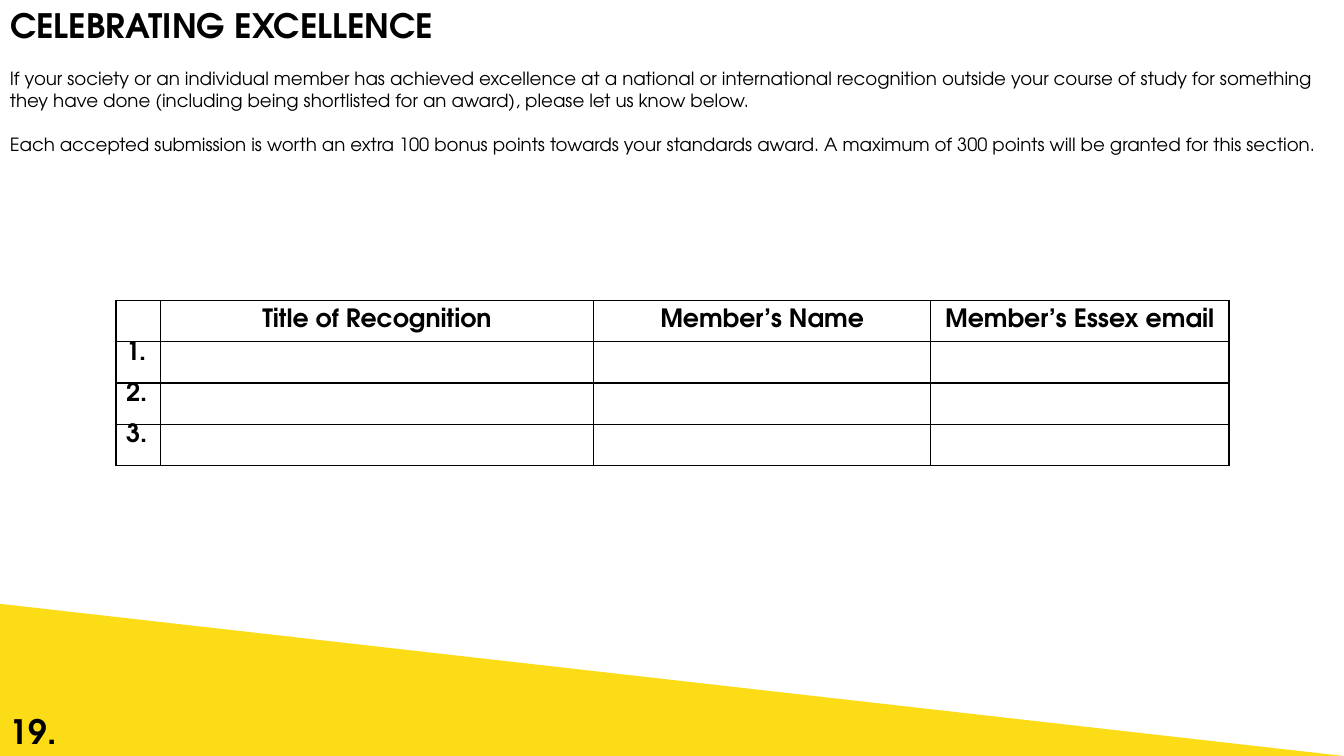
from dataclasses import dataclass

from lxml.etree import SubElement
from pptx import Presentation
from pptx.dml.color import RGBColor
from pptx.enum.shapes import MSO_SHAPE
from pptx.enum.text import MSO_ANCHOR, PP_ALIGN
from pptx.oxml.ns import qn
from pptx.slide import Slide
from pptx.table import _Cell
from pptx.text.text import TextFrame, _Paragraph
from pptx.util import Inches, Pt

FONT = "TeX Gyre Adventor"
BLACK = "000000"
WHITE = "FFFFFF"
YELLOW = "FCDC16"


@dataclass
class Column:
    """A table column with its heading and width in inches."""

    heading: str
    width: float


COLUMNS = [
    Column("", 0.44),
    Column("Title of Recognition", 4.3),
    Column("Member’s Name", 3.34),
    Column("Member’s Essex email", 2.96),
]
ENTRY_COUNT = 3
ROW_HEIGHT = 0.41
GUIDANCE = [
    "If your society or an individual member has achieved excellence at a national or "
    "international recognition outside your course of study for something they have done "
    "(including being shortlisted for an award), please let us know below.",
    "Each accepted submission is worth an extra 100 bonus points towards your standards award. "
    "A maximum of 300 points will be granted for this section.",
]


def color(value: str) -> RGBColor:
    """Turn a hex string into a colour."""
    return RGBColor.from_string(value)


def add_run(paragraph: _Paragraph, text: str, size: float, bold: bool = True) -> None:
    """Add one formatted run to a paragraph."""
    run = paragraph.add_run()
    run.text = text
    run.font.name = FONT
    run.font.size = Pt(size)
    run.font.bold = bold
    run.font.color.rgb = color(BLACK)


def add_text_box(slide: Slide, left: float, top: float, width: float, height: float) -> TextFrame:
    """Add a wrapping text box and return its text frame."""
    box = slide.shapes.add_textbox(Inches(left), Inches(top), Inches(width), Inches(height))
    box.text_frame.word_wrap = True
    return box.text_frame


def add_title(slide: Slide) -> None:
    """Place and format the slide title."""
    title = slide.shapes.title
    title.left, title.top = Inches(0), Inches(0)
    title.width, title.height = Inches(13.33), Inches(0.5)
    title.text_frame.vertical_anchor = MSO_ANCHOR.TOP
    paragraph = title.text_frame.paragraphs[0]
    paragraph.alignment = PP_ALIGN.LEFT
    add_run(paragraph, "CELEBRATING EXCELLENCE", 24)


def add_guidance(slide: Slide) -> None:
    """Add the explanatory paragraphs below the title."""
    frame = add_text_box(slide, 0, 0.62, 13.33, 0.98)
    for index, text in enumerate(GUIDANCE):
        paragraph = frame.add_paragraph() if index else frame.paragraphs[0]
        if index:
            paragraph.space_before = Pt(15.7)
        add_run(paragraph, text, 13, bold=False)


def format_cell(cell: _Cell) -> None:
    """Give a cell thin black borders and a white fill."""
    properties = cell._tc.get_or_add_tcPr()
    for side in ("a:lnL", "a:lnR", "a:lnT", "a:lnB"):
        line = SubElement(properties, qn(side), w=str(Pt(1)))
        fill = SubElement(line, qn("a:solidFill"))
        SubElement(fill, qn("a:srgbClr"), val=BLACK)
    cell.fill.solid()
    cell.fill.fore_color.rgb = color(WHITE)


def add_recognition_table(slide: Slide) -> None:
    """Add the form table with headings and numbered entries."""
    row_count = ENTRY_COUNT + 1
    width = sum(column.width for column in COLUMNS)
    table = slide.shapes.add_table(
        row_count, len(COLUMNS), Inches(1.15), Inches(2.98),
        Inches(width), Inches(ROW_HEIGHT * row_count),
    ).table
    for row in table.rows:
        row.height = Inches(ROW_HEIGHT)
    for cell in table.iter_cells():
        format_cell(cell)
    for index, column in enumerate(COLUMNS):
        table.columns[index].width = Inches(column.width)
        if column.heading:
            cell = table.cell(0, index)
            cell.vertical_anchor = MSO_ANCHOR.MIDDLE
            paragraph = cell.text_frame.paragraphs[0]
            paragraph.alignment = PP_ALIGN.CENTER
            add_run(paragraph, column.heading, 18)
    for number in range(1, row_count):
        cell = table.cell(number, 0)
        cell.margin_top = cell.margin_bottom = Inches(0)
        add_run(cell.text_frame.paragraphs[0], f"{number}.", 18)


def add_footer(slide: Slide) -> None:
    """Add the yellow wedge and the page number."""
    wedge = slide.shapes.add_shape(
        MSO_SHAPE.RIGHT_TRIANGLE, Inches(0), Inches(5.99), Inches(13.33), Inches(1.51)
    )
    wedge.shadow.inherit = False
    wedge.fill.solid()
    wedge.fill.fore_color.rgb = color(YELLOW)
    wedge.line.fill.background()
    frame = add_text_box(slide, 0, 7, 0.68, 0.5)
    add_run(frame.paragraphs[0], "19.", 24)


def main() -> None:
    """Build and save the presentation."""
    presentation = Presentation()
    presentation.slide_width = Inches(13.33)
    presentation.slide_height = Inches(7.5)
    slide = presentation.slides.add_slide(presentation.slide_layouts[5])
    add_title(slide)
    add_guidance(slide)
    add_recognition_table(slide)
    add_footer(slide)
    presentation.save("out.pptx")


if __name__ == "__main__":
    main()
